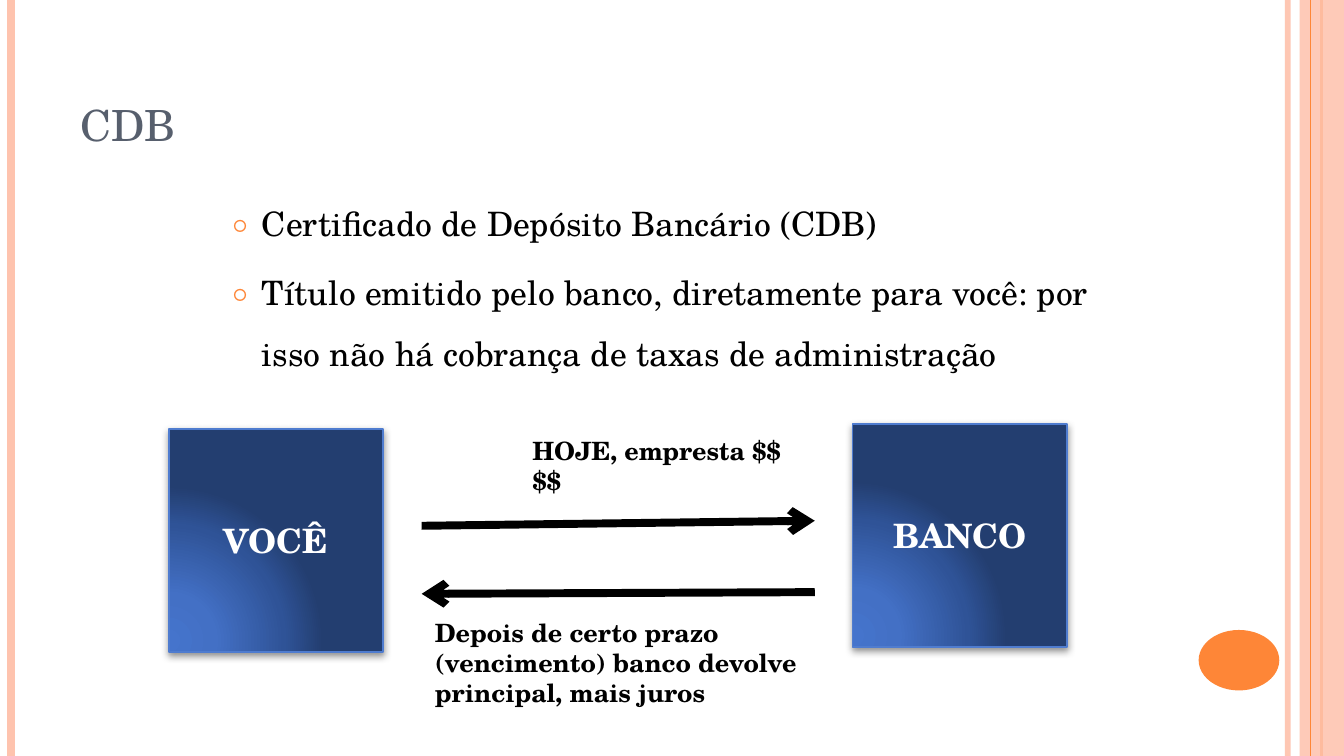
from dataclasses import dataclass
from typing import Any

from lxml import etree
from pptx import Presentation
from pptx import util as u
from pptx.dml.color import RGBColor
from pptx.enum import shapes, text
from pptx.oxml.ns import qn

EMU_PER_PX = 5715  # 160 px to the inch


@dataclass(frozen=True)
class Theme:
    font: str = "TeX Gyre Schola"
    ink: str = "000000"
    white: str = "FFFFFF"
    heading: str = "575F6D"
    orange: str = "FE8637"
    peach: str = "FEC3AE"
    party_edge: str = "4F7CCF"
    party_stops: tuple = ((0, "4574CC"), (30, "4370C5"), (75, "2F5397"), (100, "233E70"))
    title_size: float = 23
    body_size: float = 18
    label_size: float = 13.5


@dataclass(frozen=True)
class Area:
    left: int
    top: int
    width: int
    height: int


@dataclass(frozen=True)
class Rule:
    start: tuple[int, int]
    end: tuple[int, int]
    color: str
    weight: float
    opacity: int = 100
    arrow: bool = False


@dataclass(frozen=True)
class Caption:
    area: Area
    lines: tuple[str, ...]
    size: float
    color: str = Theme.ink
    bold: bool = False
    anchor: Any = text.MSO_ANCHOR.TOP
    bullets: bool = False
    small_caps: bool = False


@dataclass(frozen=True)
class Party:
    name: str
    area: Area


THEME = Theme()
PAGE = Area(0, 0, 1600, 900)
ORB = Area(1427, 750, 96, 72)
SIDE_BAND = Area(1547, 0, 53, PAGE.height)
BULLET_INDENT = 36


def side_rule(x: int, color: str, weight: float, opacity: int = 100) -> Rule:
    return Rule((x, 0), (x, PAGE.height), color, weight, opacity)


BACK_RULES = (
    side_rule(1533, THEME.peach, 3, 93),
    side_rule(13, THEME.peach, 4.5),
    side_rule(1573, THEME.orange, 1.5),
)
FRONT_RULE = side_rule(1560, THEME.orange, 0.75)
ARROWS = (
    Rule((502, 626), (970, 620), THEME.ink, 4.25, arrow=True),
    Rule((970, 705), (502, 707), THEME.ink, 4.25, arrow=True),
)
PARTIES = (
    Party("VOCÊ", Area(201, 511, 255, 265)),
    Party("BANCO", Area(1015, 505, 255, 265)),
)
CAPTIONS = (
    Caption(Area(80, 36, 1307, 150), ("CDB",), THEME.title_size, THEME.heading,
            anchor=text.MSO_ANCHOR.BOTTOM, small_caps=True),
    Caption(Area(260, 210, 1080, 260),
            ("Certificado de Depósito Bancário (CDB)",
             "Título emitido pelo banco, diretamente para você: por isso "
             "não há cobrança de taxas de administração"),
            THEME.body_size, bullets=True),
    Caption(Area(618, 510, 331, 90), ("HOJE, empresta $$$$",), THEME.label_size, bold=True),
    Caption(Area(502, 727, 488, 125),
            ("Depois de certo prazo (vencimento) banco devolve principal, mais juros",),
            THEME.label_size, bold=True),
)


def px(length: int) -> u.Emu:
    return u.Emu(length * EMU_PER_PX)


def bounds(area: Area) -> tuple[u.Emu, ...]:
    return px(area.left), px(area.top), px(area.width), px(area.height)


def rgb(color: str) -> RGBColor:
    return RGBColor.from_string(color)


def add_node(parent: Any, tag: str, **values: Any) -> Any:
    """Append a DrawingML element with the given attributes."""
    return etree.SubElement(parent, qn(f"a:{tag}"), {key: str(value) for key, value in values.items()})


def set_opacity(holder: Any, opacity: int) -> None:
    if opacity < 100:
        for color in holder.iter(qn("a:srgbClr")):
            add_node(color, "alpha", val=opacity * 1000)


def set_all(target: Any, values: dict[str, Any]) -> None:
    for name, value in values.items():
        setattr(target, name, value)


def add_span(para: Any, words: str, size: float, color: str, bold: bool) -> Any:
    span = para.add_run()
    span.text = words
    set_all(span.font, {"name": THEME.font, "size": u.Pt(size), "bold": bold})
    span.font.color.rgb = rgb(color)
    return span


def draw_rule(page: Any, rule: Rule) -> None:
    line = page.shapes.add_connector(
        shapes.MSO_CONNECTOR.STRAIGHT, *map(px, rule.start + rule.end))
    line.line.color.rgb = rgb(rule.color)
    line.line.width = u.Pt(rule.weight)
    properties = line._element.spPr
    outline = properties.find(qn("a:ln"))
    set_opacity(outline, rule.opacity)
    if rule.arrow:
        add_node(outline, "tailEnd", type="arrow")
    add_node(properties, "effectLst")


def draw_solid(page: Any, kind: Any, area: Area, color: str, opacity: int = 100) -> Any:
    """Draw a flat shape with neither outline nor shadow."""
    shape = page.shapes.add_shape(kind, *bounds(area))
    shape.shadow.inherit = False
    shape.fill.solid()
    shape.fill.fore_color.rgb = rgb(color)
    shape.line.fill.background()
    set_opacity(shape._element.spPr, opacity)
    return shape


def add_glow(shape: Any) -> None:
    """Replace the flat fill by a radial gradient lit from the lower left."""
    properties = shape._element.spPr
    gradient = etree.Element(qn("a:gradFill"), {"rotWithShape": "1"})
    stops = add_node(gradient, "gsLst")
    for position, color in THEME.party_stops:
        add_node(add_node(stops, "gs", pos=position * 1000), "srgbClr", val=color)
    focus = add_node(gradient, "path", path="circle")
    add_node(focus, "fillToRect", l=5000, t=100000, r=120000, b=10000)
    properties.replace(properties.find(qn("a:solidFill")), gradient)


def add_drop_shadow(shape: Any) -> None:
    effects = shape._element.spPr.find(qn("a:effectLst"))
    shadow = add_node(effects, "outerShdw", blurRad=u.Pt(4), dist=u.Pt(1.6),
                      dir=90 * 60000, rotWithShape=0)
    add_node(shadow, "srgbClr", val=THEME.ink)
    set_opacity(shadow, 42)


def draw_party(page: Any, party: Party) -> None:
    box = draw_solid(page, shapes.MSO_SHAPE.RECTANGLE, party.area, THEME.party_edge)
    box.line.color.rgb = rgb(THEME.party_edge)
    box.line.width = u.Pt(1)
    add_glow(box)
    add_drop_shadow(box)
    box.text_frame.vertical_anchor = text.MSO_ANCHOR.MIDDLE
    para = box.text_frame.paragraphs[0]
    para.alignment = text.PP_ALIGN.CENTER
    add_span(para, party.name, THEME.body_size, THEME.white, True)


def add_bullet(para: Any) -> None:
    set_all(para, {"line_spacing": 1.5, "space_before": u.Pt(4.5)})
    properties = para._p.get_or_add_pPr()
    for name, length in {"marL": BULLET_INDENT, "indent": -BULLET_INDENT}.items():
        properties.set(name, str(px(length)))
    add_node(add_node(properties, "buClr"), "srgbClr", val=THEME.orange)
    add_node(properties, "buSzPct", val=70000)
    add_node(properties, "buFont", typeface=THEME.font)
    add_node(properties, "buChar", char="○")


def draw_caption(page: Any, caption: Caption) -> None:
    frame = page.shapes.add_textbox(*bounds(caption.area)).text_frame
    set_all(frame, {"word_wrap": True, "vertical_anchor": caption.anchor})
    for index, words in enumerate(caption.lines):
        para = frame.add_paragraph() if index else frame.paragraphs[0]
        if caption.bullets:
            add_bullet(para)
        span = add_span(para, words, caption.size, caption.color, caption.bold)
        if caption.small_caps:
            span.font._element.set("cap", "small")


def main() -> None:
    deck = Presentation()
    set_all(deck, {"slide_width": px(PAGE.width), "slide_height": px(PAGE.height)})
    page = deck.slides.add_slide(deck.slide_layouts[6])
    for rule in BACK_RULES:
        draw_rule(page, rule)
    draw_solid(page, shapes.MSO_SHAPE.RECTANGLE, SIDE_BAND, THEME.peach, 87)
    draw_rule(page, FRONT_RULE)
    draw_solid(page, shapes.MSO_SHAPE.OVAL, ORB, THEME.orange)
    for party in PARTIES:
        draw_party(page, party)
    for arrow in ARROWS:
        draw_rule(page, arrow)
    for caption in CAPTIONS:
        draw_caption(page, caption)
    deck.save("out.pptx")


if __name__ == "__main__":
    main()
